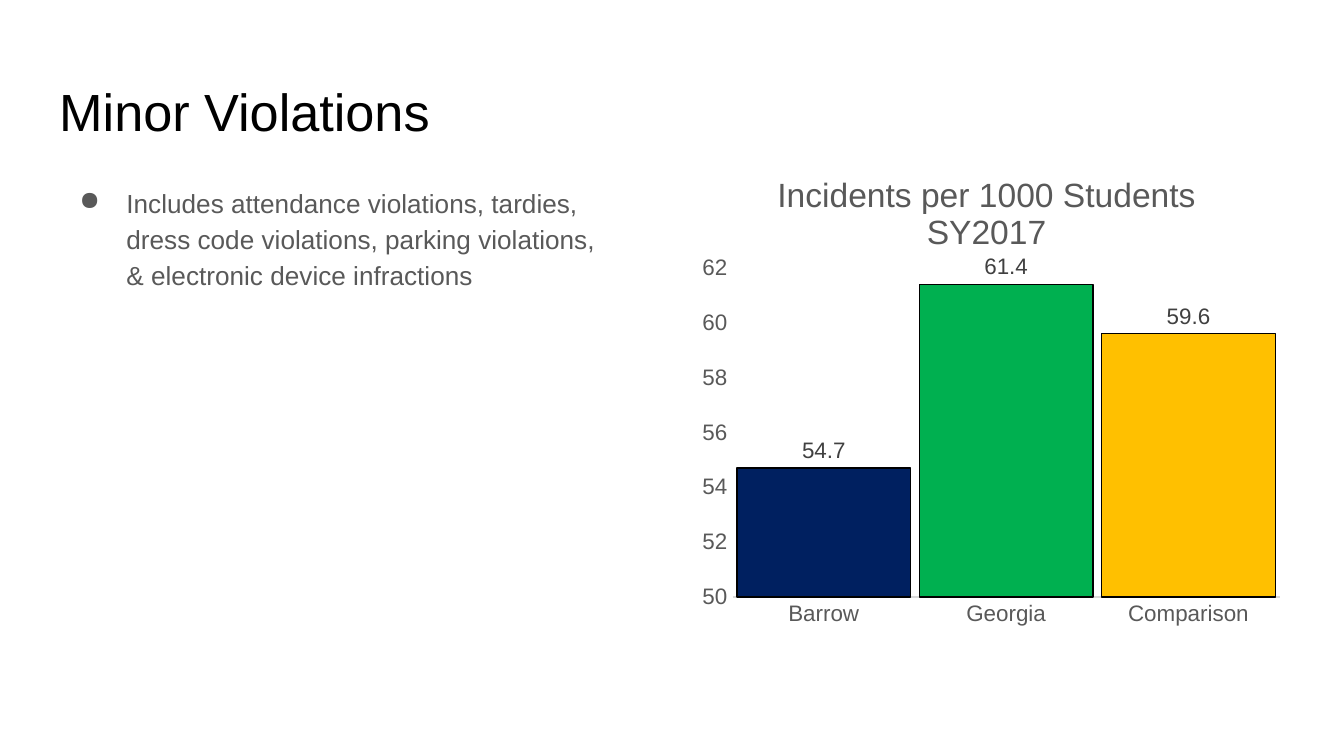
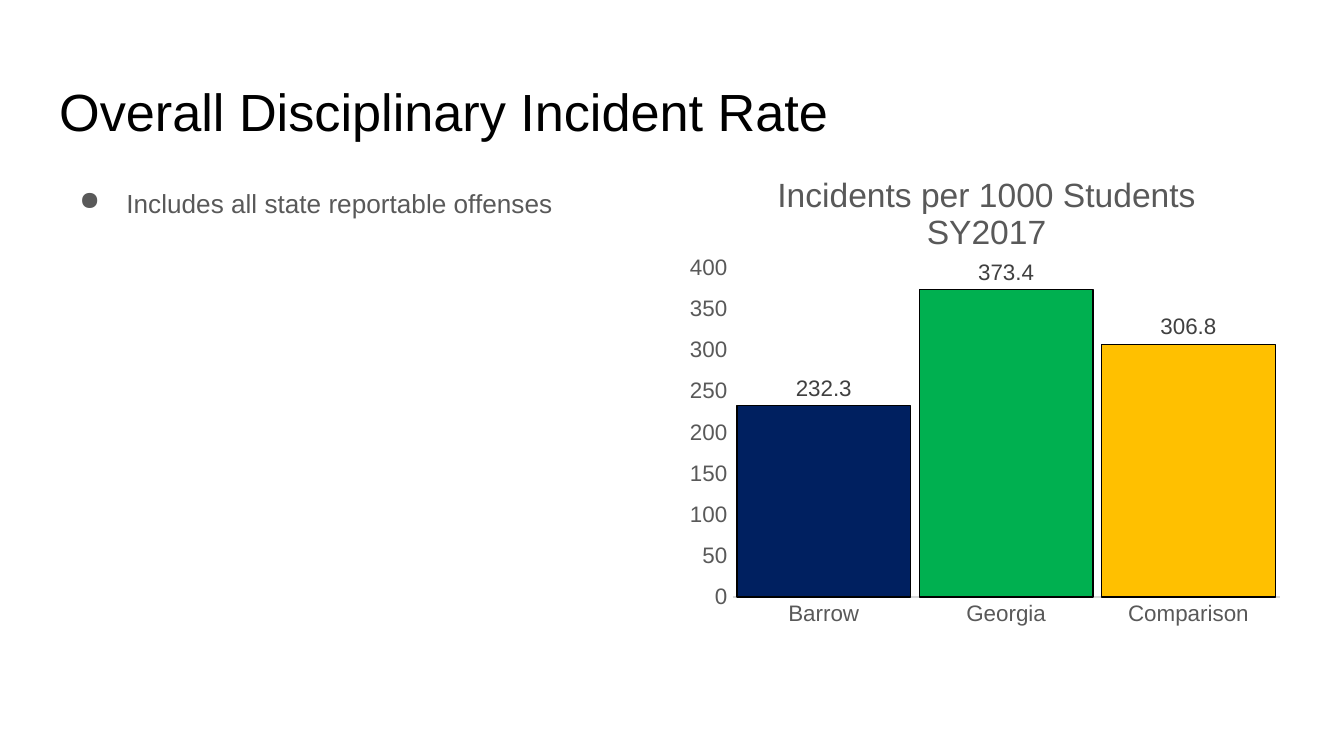
from lxml import etree
from pptx import Presentation
from pptx.chart.data import CategoryChartData
from pptx.dml.color import RGBColor
from pptx.enum.chart import XL_CHART_TYPE, XL_LABEL_POSITION, XL_TICK_MARK
from pptx.enum.text import MSO_ANCHOR
from pptx.oxml import parse_xml
from pptx.oxml.ns import nsdecls, qn
from pptx.util import Cm, Pt

FONT = "Arial"
BLACK = RGBColor(0x00, 0x00, 0x00)
GRAY = RGBColor(0x59, 0x59, 0x59)
LABEL_GRAY = RGBColor(0x40, 0x40, 0x40)
AXIS_GRAY = RGBColor(0xD9, 0xD9, 0xD9)
NAVY = RGBColor(0x00, 0x20, 0x60)
GREEN = RGBColor(0x00, 0xB0, 0x50)
GOLD = RGBColor(0xFF, 0xC0, 0x00)

DISTRICTS = ("Barrow", "Georgia", "Comparison")
BAR_COLORS = (NAVY, GREEN, GOLD)
CHART_TITLE = "Incidents per 1000 Students SY2017"
PLOT_AREA = {"x": 0.093, "y": 0.238, "w": 0.877, "h": 0.661}
LEFT = Cm(0.87)
INSET = Cm(0.25)


def style_font(font, size, color):
    font.name = FONT
    font.size = Pt(size)
    font.bold = False
    font.color.rgb = color


def add_text(page, text, top, width, height, size, color):
    box = page.shapes.add_textbox(LEFT, top, width, height)
    frame = box.text_frame
    frame.word_wrap = True
    frame.vertical_anchor = MSO_ANCHOR.TOP
    frame.margin_left = frame.margin_right = INSET
    frame.margin_top = frame.margin_bottom = INSET
    frame.text = text
    para = frame.paragraphs[0]
    style_font(para.runs[0].font, size, color)
    return para


def add_title(page, text):
    add_text(page, text, Cm(1.24), Cm(23.67), Cm(1.6), 28, BLACK)


def add_bullet(page, text):
    para = add_text(page, text, Cm(3.2), Cm(11.1), Cm(9.5), 14, GRAY)
    para.line_spacing = 1.15
    properties = para._p.get_or_add_pPr()
    properties.set("marL", str(Cm(1.27)))
    properties.set("indent", str(-Cm(0.89)))
    color = etree.SubElement(properties, qn("a:buClr"))
    etree.SubElement(color, qn("a:srgbClr"), val=str(GRAY))
    etree.SubElement(properties, qn("a:buChar"), char="●")


def set_plot_area(chart):
    sizes = "".join(f'<c:{side} val="{share}"/>' for side, share in PLOT_AREA.items())
    layout = parse_xml(
        f'<c:layout {nsdecls("c")}><c:manualLayout><c:layoutTarget val="inner"/>'
        f'<c:xMode val="edge"/><c:yMode val="edge"/>{sizes}</c:manualLayout></c:layout>'
    )
    plot_area = chart._chartSpace.chart.plotArea
    for old_layout in plot_area.findall(qn("c:layout")):
        plot_area.remove(old_layout)
    plot_area.insert(0, layout)


def style_axes(chart, low, high, step):
    for axis in (chart.category_axis, chart.value_axis):
        axis.major_tick_mark = axis.minor_tick_mark = XL_TICK_MARK.NONE
        axis.has_major_gridlines = False
        style_font(axis.tick_labels.font, 12, GRAY)
    category_line = chart.category_axis.format.line
    category_line.color.rgb = AXIS_GRAY
    category_line.width = Pt(0.75)
    scale = chart.value_axis
    scale.format.line.fill.background()
    scale.minimum_scale, scale.maximum_scale, scale.major_unit = low, high, step


def style_bars(plot):
    plot.vary_by_categories = False
    plot.gap_width = 5
    plot.overlap = -27
    series = plot.series[0]
    series.format.fill.solid()
    series.format.fill.fore_color.rgb = NAVY
    for index, color in enumerate(BAR_COLORS):
        bar = series.points[index].format
        bar.fill.solid()
        bar.fill.fore_color.rgb = color
        bar.line.color.rgb = BLACK
        bar.line.width = Pt(0.75)
    labels = series.data_labels
    labels.show_value = True
    labels.position = XL_LABEL_POSITION.OUTSIDE_END
    style_font(labels.font, 12, LABEL_GRAY)


def add_rate_chart(page, rates, low, high, step):
    data = CategoryChartData()
    data.categories = DISTRICTS
    data.add_series("Series 1", rates)
    chart = page.shapes.add_chart(
        XL_CHART_TYPE.COLUMN_CLUSTERED, Cm(12.75), Cm(2.82), Cm(11.79), Cm(9.42), data
    ).chart
    style_font(chart.font, 10, BLACK)
    chart.has_legend = False
    chart.has_title = True
    chart.chart_title.include_in_layout = False
    frame = chart.chart_title.text_frame
    frame.text = CHART_TITLE
    style_font(frame.paragraphs[0].runs[0].font, 18, GRAY)
    set_plot_area(chart)
    style_axes(chart, low, high, step)
    style_bars(chart.plots[0])


def add_page(deck, title, note, rates, scale):
    page = deck.slides.add_slide(deck.slide_layouts[6])
    add_title(page, title)
    add_bullet(page, note)
    add_rate_chart(page, rates, *scale)


def main():
    deck = Presentation()
    deck.slide_width, deck.slide_height = Cm(25.4), Cm(14.29)
    add_page(
        deck,
        "Minor Violations",
        "Includes attendance violations, tardies, dress code violations, "
        "parking violations, & electronic device infractions",
        (54.7, 61.4, 59.6),
        (50, 62, 2),
    )
    add_page(
        deck,
        "Overall Disciplinary Incident Rate",
        "Includes all state reportable offenses",
        (232.3, 373.4, 306.8),
        (0, 400, 50),
    )
    deck.save("out.pptx")


if __name__ == "__main__":
    main()
